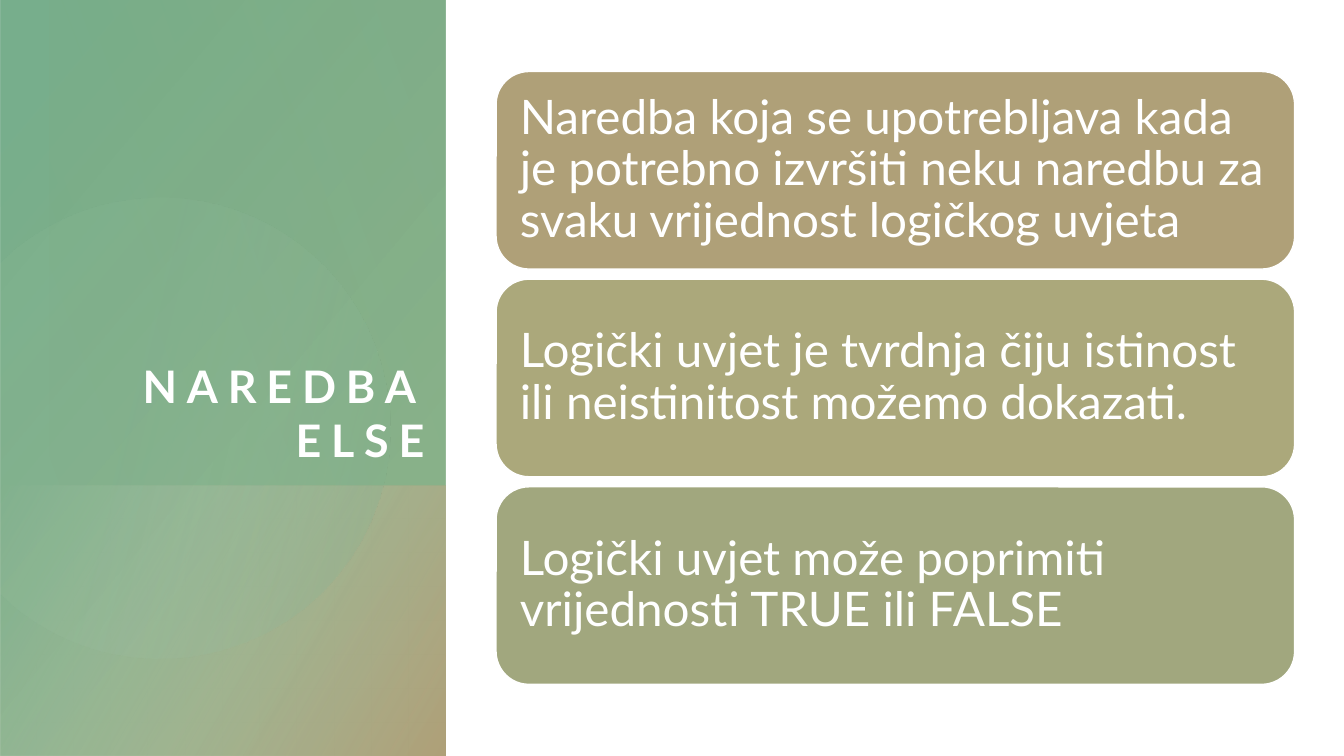
from lxml.etree import SubElement
from pptx import Presentation
from pptx.dml.color import RGBColor
from pptx.enum.shapes import MSO_SHAPE as Shape
from pptx.enum.text import MSO_ANCHOR as Anchor, MSO_AUTO_SIZE as AutoSize, PP_ALIGN as Align
from pptx.oxml.ns import qn
from pptx.util import Inches, Pt

WHITE = RGBColor(0xFF, 0xFF, 0xFF)
SAND = RGBColor(0xAF, 0xA0, 0x78)
OLIVE = RGBColor(0xAB, 0xA8, 0x7B)
MOSS = RGBColor(0xA1, 0xA7, 0x7E)
GREEN = RGBColor(0x83, 0xAC, 0x81)
TEAL = RGBColor(0x77, 0xAE, 0x8C)
MINT = RGBColor(0xAD, 0xCE, 0xBA)
PALE = RGBColor(0xB5, 0xCD, 0xB3)
LEAF = RGBColor(0x8D, 0xAA, 0x74)

CARDS = [
    (SAND, "Naredba koja se upotrebljava kada je potrebno izvršiti neku naredbu "
           "za svaku vrijednost logičkog uvjeta"),
    (OLIVE, "Logički uvjet je tvrdnja čiju istinost ili neistinitost možemo dokazati."),
    (MOSS, "Logički uvjet može poprimiti vrijednosti TRUE ili FALSE"),
]
CARD_TOP, CARD_PITCH = 0.71, 2.06

# Circle cut off by the left slide edge: start point, then cubic curves
CIRCLE_START = (1.64, 1.96)
CIRCLE_CURVES = [
    [(2.61, 1.98), (3.5, 2.63), (3.78, 3.62)],
    [(4.13, 4.83), (3.43, 6.1), (2.22, 6.44)],
    [(1.46, 6.66), (0.68, 6.47), (0.12, 6)],
    [(0, 5.89), (0, 5.89), (0, 5.89)],
    [(0, 2.61), (0, 2.61), (0, 2.61)],
    [(0.15, 2.47), (0.15, 2.47), (0.15, 2.47)],
    [(0.38, 2.29), (0.65, 2.14), (0.95, 2.05)],
    [(1.18, 1.99), (1.41, 1.96), (1.64, 1.96)],
]


def curve_points(start, curves, steps=16):
    """Sample a chain of cubic curves as points in EMU."""
    points = []
    for first, second, end in curves:
        for step in range(1, steps + 1):
            t = step / steps
            weights = ((1 - t) ** 3, 3 * t * (1 - t) ** 2, 3 * t * t * (1 - t), t ** 3)
            corners = (start, first, second, end)
            points.append(tuple(
                Inches(sum(w * corner[axis] for w, corner in zip(weights, corners)))
                for axis in (0, 1)))
        start = end
    return points


class SlideBuilder:
    font = "Lato"

    def __init__(self, deck):
        self.slide = deck.slides.add_slide(deck.slide_layouts[5])
        self.shapes = self.slide.shapes

    def add_text(self, frame, text, size, bold=False, align=Align.LEFT):
        paragraph = frame.paragraphs[0]
        paragraph.alignment = align
        run = paragraph.add_run()
        run.text = text
        run.font.name = self.font
        run.font.size = Pt(size)
        run.font.bold = bold
        run.font.color.rgb = WHITE
        return run

    def shade(self, shape, stops, angle):
        """Fill with two (position, colour, opacity) stops, in percent; angle is clockwise."""
        shape.shadow.inherit = False
        shape.line.fill.background()
        shape.fill.gradient()
        shape.fill.gradient_angle = 360 - angle
        for stop, (position, color, _) in zip(shape.fill.gradient_stops, stops):
            stop.position = position / 100
            stop.color.rgb = color
        colors = shape._element.spPr.iter(qn("a:srgbClr"))
        for color, (_, _, opacity) in zip(colors, stops):
            SubElement(color, qn("a:alpha")).set("val", str(opacity * 1000))

    def panel(self, box, rotation, stops, angle):
        panel = self.shapes.add_shape(Shape.RECTANGLE, *map(Inches, box))
        panel.rotation = rotation
        panel._element.spPr.xfrm.set("flipH", "1")
        self.shade(panel, stops, angle)

    def circle(self, stops, angle):
        outline = self.shapes.build_freeform(*map(Inches, CIRCLE_START))
        outline.add_line_segments(curve_points(CIRCLE_START, CIRCLE_CURVES))
        self.shade(outline.convert_to_shape(), stops, angle)

    def title(self, text, box):
        title = self.shapes.title
        self.shapes._spTree.append(title._element)
        title.left, title.top, title.width, title.height = map(Inches, box)
        frame = title.text_frame
        frame.word_wrap = True
        frame.auto_size = AutoSize.NONE
        frame.vertical_anchor = Anchor.BOTTOM
        frame.margin_left = frame.margin_right = frame.margin_top = frame.margin_bottom = 0
        run = self.add_text(frame, text, 32, bold=True, align=Align.RIGHT)
        run.font._element.set("spc", "700")

    def card(self, text, color, top):
        card = self.shapes.add_shape(
            Shape.ROUNDED_RECTANGLE, Inches(4.92), Inches(top), Inches(7.92), Inches(1.96))
        card.shadow.inherit = False
        card.fill.solid()
        card.fill.fore_color.rgb = color
        card.line.color.rgb = WHITE
        card.line.width = Pt(1)
        frame = card.text_frame
        frame.word_wrap = True
        frame.vertical_anchor = Anchor.MIDDLE
        frame.margin_left = frame.margin_right = Inches(0.14)
        frame.margin_top = frame.margin_bottom = Inches(0.14)
        self.add_text(frame, text, 34)
        frame.paragraphs[0].line_spacing = 0.9


def main():
    deck = Presentation()
    deck.slide_width, deck.slide_height = Inches(13.33), Inches(7.5)
    page = SlideBuilder(deck)
    page.panel((-1.54, 1.54, 7.5, 4.42), 270, [(8, TEAL, 100), (100, GREEN, 89)], 50)
    page.panel((0.86, 3.95, 2.69, 4.42), 270, [(0, PALE, 0), (99, SAND, 100)], 60)
    page.circle([(36, MINT, 6), (100, TEAL, 26)], 14)
    page.panel((0.05, 0.45, 4.81, 3.92), 90, [(0, GREEN, 29), (100, LEAF, 0)], 110)
    page.title("NAREDBA ELSE", (0.5, 0.95, 3.71, 3.68))
    for row, (color, text) in enumerate(CARDS):
        page.card(text, color, CARD_TOP + row * CARD_PITCH)
    deck.save("out.pptx")


if __name__ == "__main__":
    main()
